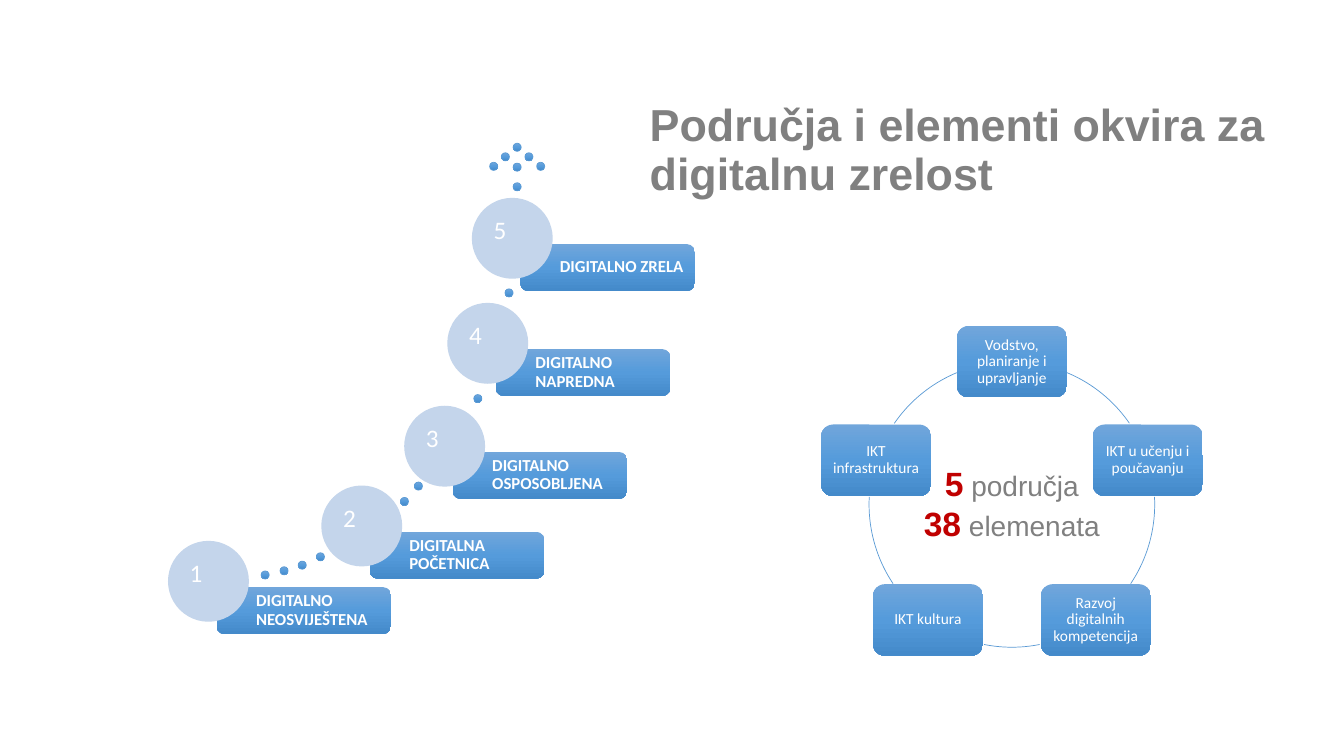
from copy import deepcopy
from math import cos, radians, sin

from pptx import Presentation
from pptx.dml.color import RGBColor
from pptx.enum import shapes, text
from pptx.util import Pt

WHITE = RGBColor(0xFF, 0xFF, 0xFF)
GREY = RGBColor(0x80, 0x80, 0x80)
RED = RGBColor(0xC0, 0x00, 0x00)
BLUE = RGBColor(0x5B, 0x9B, 0xD5)
PALE_BLUE = RGBColor(0xC4, 0xD5, 0xEB)
GRADIENT = [
    (0, RGBColor(0x71, 0xA6, 0xDB)),
    (0.5, RGBColor(0x55, 0x9B, 0xDB)),
    (1, RGBColor(0x44, 0x8A, 0xCA)),
]

TITLE = "Područja i elementi okvira za digitalnu zrelost"
AREAS = [
    "Vodstvo, planiranje i upravljanje",
    "IKT u učenju i poučavanju",
    "Razvoj digitalnih kompetencija",
    "IKT kultura",
    "IKT infrastruktura",
]
ARCS = [(292.7, 325.4), (357, 33.7), (78.8, 101.2), (146.3, 183), (214.6, 247.3)]
COUNTS = [("5", " područja"), ("38", " elemenata")]
LEVELS = [
    ("DIGITALNO NEOSVIJEŠTENA", 0, 284),
    ("DIGITALNA POČETNICA", 109.5, 244.5),
    ("DIGITALNO OSPOSOBLJENA", 168.7, 187.5),
    ("DIGITALNO NAPREDNA", 199.5, 114),
    ("DIGITALNO ZRELA", 217, 39),
]
TRAIL = [
    (106, 292.5), (93, 298.5), (80, 302.5), (66.5, 305.5),
    (176, 242), (166, 253), (218.4, 179.5), (240.7, 104),
]
ARROW_TIP = 246.5
ARROW = [(ARROW_TIP + 8.4 * n, 6.8 * abs(n)) for n in range(-2, 3)]
ARROW += [(ARROW_TIP, 14.2), (ARROW_TIP, 28.2)]


def add_shape(page, kind, left, top, width, height):
    shape = page.shapes.add_shape(kind, Pt(left), Pt(top), Pt(width), Pt(height))
    shape.shadow.inherit = False
    shape.line.fill.background()
    return shape


def add_text_box(page, left, top, width, height):
    box = page.shapes.add_textbox(Pt(left), Pt(top), Pt(width), Pt(height))
    box.text_frame.word_wrap = True
    return box.text_frame


def style(span, font, size, color, bold=False):
    span.font.name = font
    span.font.size = Pt(size)
    span.font.color.rgb = color
    span.font.bold = bold


def fill_gradient(shape):
    shape.fill.gradient()
    shape.fill.gradient_angle = 270
    stop_list = shape.fill._fill._gradFill.gsLst
    stop_list.insert(1, deepcopy(stop_list[0]))
    for stop, (position, color) in zip(shape.fill.gradient_stops, GRADIENT):
        stop.position = position
        stop.color.rgb = color


def write(shape, wording, size, align, anchor, bold=False):
    frame = shape.text_frame
    frame.word_wrap = True
    frame.vertical_anchor = anchor
    frame.text = wording
    para = frame.paragraphs[0]
    para.alignment = align
    style(para.runs[0], "Calibri", size, WHITE, bold)
    return frame


def add_card(page, wording, left, top, width, height, size, align, indent, bold=False):
    card = add_shape(page, shapes.MSO_SHAPE.ROUNDED_RECTANGLE, left, top, width, height)
    fill_gradient(card)
    frame = write(card, wording, size, align, text.MSO_ANCHOR.MIDDLE, bold)
    frame.margin_left = Pt(indent)
    frame.margin_right = frame.margin_top = frame.margin_bottom = Pt(3.3)
    frame.paragraphs[0].line_spacing = 0.9


def add_title(page, left, top, width, height):
    frame = add_text_box(page, left, top, width, height)
    frame.text = TITLE
    para = frame.paragraphs[0]
    para.line_spacing = 0.9
    style(para.runs[0], "Arial", 32, GREY, True)


def add_wheel(page, left, top, size):
    radius = size / 2
    center_x, center_y = left + radius, top + radius
    card_width, card_height = 78.6, 51.1
    for index, (area, (start, end)) in enumerate(zip(AREAS, ARCS)):
        angle = radians(72 * index - 90)
        add_card(
            page, area,
            center_x + radius * cos(angle) - card_width / 2,
            center_y + radius * sin(angle) - card_height / 2,
            card_width, card_height, 11, text.PP_ALIGN.CENTER, 3.3,
        )
        arc = add_shape(page, shapes.MSO_SHAPE.ARC, left, top, size, size)
        arc.fill.background()
        arc.line.color.rgb = BLUE
        arc.line.width = Pt(0.5)
        arc.adjustments[0] = start * 0.6
        arc.adjustments[1] = end * 0.6

    frame = add_text_box(page, center_x - 72, center_y - 33.5, 144, 65.5)
    for index, (count, noun) in enumerate(COUNTS):
        para = frame.add_paragraph() if index else frame.paragraphs[0]
        para.alignment = text.PP_ALIGN.CENTER
        for wording, size, color, bold in ((count, 24, RED, True), (noun, 20, GREY, False)):
            span = para.add_run()
            span.text = wording
            style(span, "Arial", size, color, bold)


def add_staircase(page, left, top):
    for x, y in TRAIL + ARROW:
        dot = add_shape(page, shapes.MSO_SHAPE.OVAL, left + x, top + y, 5.8, 5.8)
        fill_gradient(dot)
        dot.line.color.rgb = BLUE
        dot.line.width = Pt(0.5)
    for number, (level, x, y) in enumerate(LEVELS, 1):
        add_card(
            page, level, left + x + 34.7, top + y + 33.1, 124.6, 33.4,
            12, text.PP_ALIGN.LEFT, 26.6, True,
        )
        circle = add_shape(page, shapes.MSO_SHAPE.OVAL, left + x, top + y, 57.8, 57.8)
        circle.fill.solid()
        circle.fill.fore_color.rgb = PALE_BLUE
        write(circle, str(number), 18, text.PP_ALIGN.LEFT, text.MSO_ANCHOR.TOP)


def main():
    deck = Presentation()
    deck.slide_width, deck.slide_height = Pt(960), Pt(540)
    page = deck.slides.add_slide(deck.slide_layouts[6])
    add_title(page, 457, 70, 503, 77)
    add_wheel(page, 620.8, 258.3, 204)
    add_staircase(page, 120, 102.3)
    deck.save("out.pptx")


if __name__ == "__main__":
    main()
